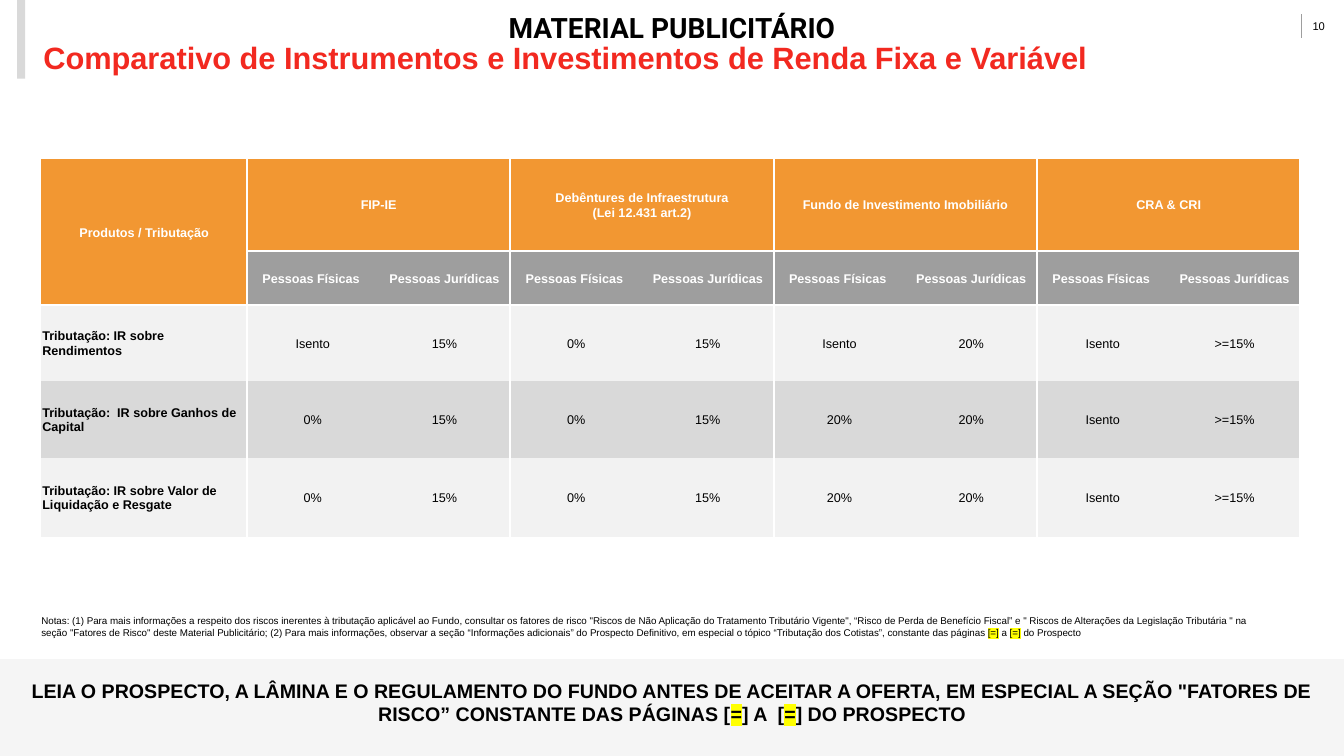
from lxml import etree
from pptx import Presentation
from pptx import util as u
from pptx.dml.color import RGBColor
from pptx.enum import shapes, text
from pptx.oxml import ns

COLORS = {
    "black": "000000", "white": "FFFFFF", "red": "F22920", "orange": "F29732",
    "gray": "9E9E9E", "silver": "D9D9D9", "pale": "F2F2F2", "band": "F5F5F5",
    "yellow": "FFFF00",
}
CENTER, LEFT = text.PP_ALIGN.CENTER, text.PP_ALIGN.LEFT
PRODUCTS = ["FIP-IE", "Debêntures de Infraestrutura\n(Lei 12.431 art.2)",
            "Fundo de Investimento Imobiliário", "CRA & CRI"]
INVESTORS = ["Pessoas Físicas ", "Pessoas Jurídicas"]
TAXES = [
    ["Tributação: IR sobre Rendimentos",
     "Isento", "15%", "0%", "15%", "Isento", "20%", "Isento", ">=15%"],
    ["Tributação:  IR sobre Ganhos de Capital",
     "0%", "15%", "0%", "15%", "20%", "20%", "Isento", ">=15%"],
    ["Tributação: IR sobre Valor de Liquidação e Resgate",
     "0%", "15%", "0%", "15%", "20%", "20%", "Isento", ">=15%"],
]
ROW_HEIGHTS = [0.91, 0.54, 0.75, 0.76, 0.79]
ROW_FILLS = ["orange", "gray", "pale", "silver", "pale"]
NOTES = [
    "Notas: (1) Para mais informações a respeito dos riscos inerentes à tributação "
    "aplicável ao Fundo, consultar os fatores de risco \"Riscos de Não Aplicação do "
    "Tratamento Tributário Vigente\", “Risco de Perda de Benefício Fiscal” e \" Riscos "
    "de Alterações da Legislação Tributária \" na seção \"Fatores de Risco\" deste "
    "Material Publicitário; (2) Para mais informações, observar a seção “Informações "
    "adicionais” do Prospecto Definitivo, em especial o tópico “Tributação dos "
    "Cotistas”, constante das páginas ",
    "[=]", " a ", "[=]", " do Prospecto",
]
WARNING = [
    "LEIA O PROSPECTO, A LÂMINA E O REGULAMENTO DO FUNDO ANTES DE ACEITAR A OFERTA, "
    "EM ESPECIAL A SEÇÃO \"FATORES DE RISCO” CONSTANTE DAS PÁGINAS [",
    "=", "] A  [", "=", "] DO PROSPECTO",
]


def rgb(name):
    return RGBColor.from_string(COLORS[name])


def paint(item, color):
    item.fill.solid()
    item.fill.fore_color.rgb = rgb(color)


def add_color(parent, tag, color):
    element = etree.SubElement(parent, ns.qn(tag))
    etree.SubElement(element, ns.qn("a:srgbClr")).set("val", COLORS[color])
    return element


def write(frame, content, size, color="black", bold=False, font="Arial",
          align=LEFT, spacing=None):
    """Lists alternate plain and highlighted spans."""
    lines = [content] if isinstance(content, list) else [[line] for line in content.split("\n")]
    for number, parts in enumerate(lines):
        para = frame.add_paragraph() if number else frame.paragraphs[0]
        para.alignment = align
        if spacing:
            para.line_spacing = spacing
        for index, part in enumerate(parts):
            span = para.add_run()
            span.text = part
            span.font.size = u.Pt(size)
            span.font.bold = bold
            span.font.color.rgb = rgb(color)
            span.font.name = font
            if index % 2:
                props = span.font._element
                mark = add_color(props, "a:highlight", "yellow")
                props.find(ns.qn("a:latin")).addprevious(mark)


def set_frame(frame, insets, anchor=text.MSO_ANCHOR.MIDDLE):
    frame.word_wrap = True
    frame.vertical_anchor = anchor
    (frame.margin_left, frame.margin_top,
     frame.margin_right, frame.margin_bottom) = [u.Inches(value) for value in insets]


def add_text(page, box, content, insets=(0, 0, 0, 0),
             anchor=text.MSO_ANCHOR.MIDDLE, **style):
    frame = page.shapes.add_textbox(*map(u.Inches, box)).text_frame
    set_frame(frame, insets, anchor)
    write(frame, content, **style)


def add_bar(page, box, color):
    bar = page.shapes.add_shape(shapes.MSO_SHAPE.RECTANGLE, *map(u.Inches, box))
    bar.shadow.inherit = False
    paint(bar, color)
    bar.line.fill.background()
    return bar


def add_header(page, box):
    left, top, width, height = box
    add_text(page, (left, top, width, 0.54), "MATERIAL PUBLICITÁRIO",
             insets=(0.1, 0.05, 0.1, 0.05), size=20, bold=True, font="Roboto", align=CENTER)
    rule_x = left + width - 0.42
    add_text(page, (rule_x, top + 0.17, 0.34, 0.18), "10", size=8, align=CENTER)
    rule = page.shapes.add_connector(
        shapes.MSO_CONNECTOR.STRAIGHT,
        *map(u.Inches, (rule_x, top + 0.14, rule_x, top + 0.38)))
    rule.line.color.rgb = rgb("gray")
    rule.line.width = u.Pt(0.5)
    etree.SubElement(rule._element.spPr, ns.qn("a:effectLst"))
    add_bar(page, (left + 0.17, top, 0.08, height), "silver")

    title = page.shapes.title
    title.left, title.top, title.width, title.height = map(
        u.Inches, (left + 0.43, top + 0.38, 12.49, 0.43))
    set_frame(title.text_frame, (0, 0.05, 0.1, 0.05), text.MSO_ANCHOR.BOTTOM)
    title.text_frame.auto_size = text.MSO_AUTO_SIZE.SHAPE_TO_FIT_TEXT
    write(title.text_frame, "Comparativo de Instrumentos e Investimentos de Renda Fixa e Variável",
          size=22, color="red", bold=True, spacing=0.9)


def set_borders(cell, row, column):
    visible = {
        "L": column % 2 == 1,
        "R": column % 2 == 0 or row == 0,
        "T": row in (1, 2),
        "B": row < 2,
    }
    props = cell._tc.get_or_add_tcPr()
    for index, (side, shown) in enumerate(visible.items()):
        if shown:
            edge = etree.Element(ns.qn(f"a:ln{side}"), w=str(u.Pt(1.5)))
            add_color(edge, "a:solidFill", "white")
        else:
            edge = etree.Element(ns.qn(f"a:ln{side}"), w="0")
            etree.SubElement(edge, ns.qn("a:noFill"))
        props.insert(index, edge)


def add_tax_table(page, box):
    left, top, width, height = box
    products = ["Produtos / Tributação"]
    for product in PRODUCTS:
        products += [product, ""]
    rows = [products, [""] + INVESTORS * len(PRODUCTS)] + TAXES
    table = page.shapes.add_table(
        len(rows), len(products), *map(u.Inches, box)).table
    table.first_row = table.horz_banding = False
    label_width = 2.04
    value_width = (width - label_width) / (len(products) - 1)
    for index, column in enumerate(table.columns):
        column.width = u.Inches(value_width if index else label_width)
    for row, row_height in zip(table.rows, ROW_HEIGHTS):
        row.height = u.Inches(row_height)
    table.cell(0, 0).merge(table.cell(1, 0))
    for index in range(1, len(products), 2):
        table.cell(0, index).merge(table.cell(0, index + 1))

    for r, values in enumerate(rows):
        for c, value in enumerate(values):
            cell = table.cell(r, c)
            if cell.is_spanned:
                continue
            paint(cell, ROW_FILLS[r])
            set_borders(cell, r, c)
            cell.vertical_anchor = text.MSO_ANCHOR.MIDDLE
            cell.margin_left = cell.margin_top = cell.margin_right = u.Inches(0.01)
            cell.margin_bottom = 0
            heading = r < 2
            write(cell.text_frame, value, size=9, bold=heading or c == 0,
                  color="white" if heading else "black",
                  align=CENTER if heading or c else LEFT)


def add_warning(page, box):
    band = add_bar(page, box, "band")
    set_frame(band.text_frame, (0.1, 0.05, 0.1, 0.16))
    write(band.text_frame, WARNING, size=14, bold=True, align=CENTER)


def main():
    deck = Presentation()
    deck.slide_width, deck.slide_height = u.Inches(13.33), u.Inches(7.5)
    page = deck.slides.add_slide(deck.slide_layouts[5])
    add_header(page, (0, 0, 13.33, 0.78))
    add_tax_table(page, (0.41, 1.58, 12.49, 3.75))
    add_text(page, (0.41, 6.1, 12.05, 0.08), NOTES, size=7, anchor=text.MSO_ANCHOR.TOP)
    add_warning(page, (0, 6.54, 13.33, 0.96))
    deck.save("out.pptx")


if __name__ == "__main__":
    main()
